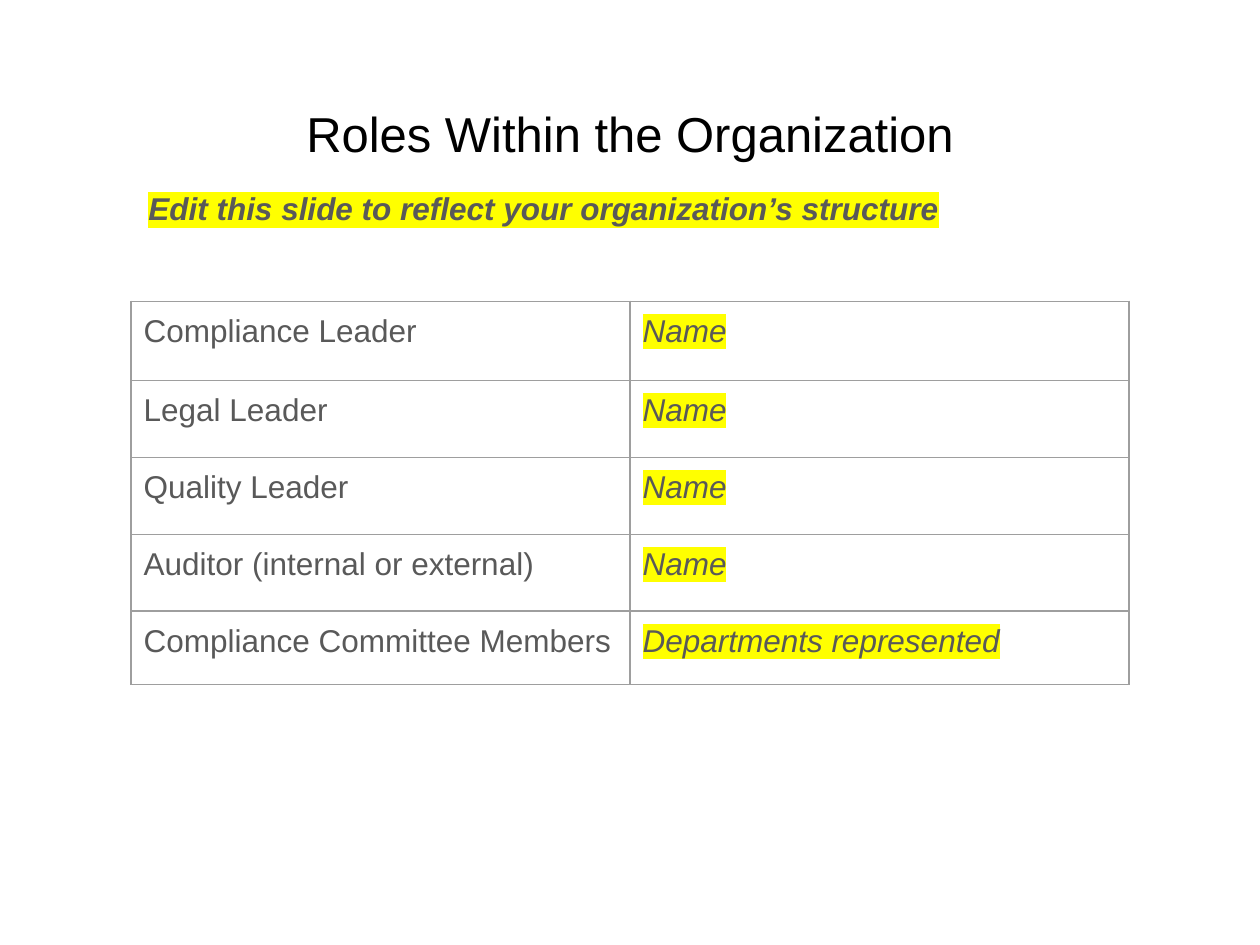
from pptx import Presentation
from pptx.dml.color import RGBColor as RGB
from pptx.enum.text import MSO_ANCHOR as Anchor, PP_ALIGN as Align
from pptx.oxml import parse_xml
from pptx.oxml.ns import nsdecls, qn
from pptx.util import Inches, Pt

# Content
TITLE = "Roles Within the Organization"
NOTE = "Edit this slide to reflect your organization’s structure"
ROLES = [
    ("Compliance Leader", "Name"),
    ("Legal Leader", "Name"),
    ("Quality Leader", "Name"),
    ("Auditor (internal or external)", "Name"),
    ("Compliance Committee Members", "Departments represented"),
]

THEME = {
    "font": "Arial", "title_size": 28, "body_size": 18,
    "title": "000000", "body": "595959", "mark": "FFFF00",
    "border": "9E9E9E", "border_pt": 0.75,
}
COL_W = 3.96
ROW_H = [0.63, 0.61, 0.61, 0.61, 0.58]


def add_run(p, text, size, color, bold=False, italic=False, mark=None):
    r = p.add_run()
    r.text = text
    f = r.font
    f.name, f.size, f.bold, f.italic = THEME["font"], Pt(size), bold, italic
    f.color.rgb = RGB.from_string(color)
    if mark:  # a highlight follows the fill
        r._r.rPr.find(qn("a:solidFill")).addnext(parse_xml(
            f'<a:highlight {nsdecls("a")}><a:srgbClr val="{mark}"/></a:highlight>'))


def add_text_box(slide, x, y, w, h, anchor):
    tf = slide.shapes.add_textbox(*map(Inches, (x, y, w, h))).text_frame
    tf.word_wrap = True
    tf.vertical_anchor = anchor
    return tf.paragraphs[0]


def style_cell(cell):
    cell.margin_left = cell.margin_right = Inches(0.1)
    cell.margin_top = cell.margin_bottom = Inches(0.1)
    tcPr = cell._tc.get_or_add_tcPr()
    for side in "LRTB":
        tcPr.append(parse_xml(
            f'<a:ln{side} {nsdecls("a")} w="{Pt(THEME["border_pt"])}"><a:solidFill>'
            f'<a:srgbClr val="{THEME["border"]}"/></a:solidFill></a:ln{side}>'))
    cell.fill.background()


def main():
    prs = Presentation()
    prs.slide_width, prs.slide_height = Inches(10), Inches(7.5)
    s = prs.slides.add_slide(prs.slide_layouts[6])

    # Title
    p = add_text_box(s, 0.5, 0.37, 9, 1.37, Anchor.MIDDLE)
    p.alignment = Align.CENTER
    add_run(p, TITLE, THEME["title_size"], THEME["title"])

    # Table of roles
    table = s.shapes.add_table(
        len(ROLES), 2, Inches(1.04), Inches(2.39),
        Inches(2 * COL_W), Inches(sum(ROW_H))).table
    table.first_row = table.horz_banding = False
    for col in table.columns:
        col.width = Inches(COL_W)
    for row, height, texts in zip(table.rows, ROW_H, ROLES):
        row.height = Inches(height)
        for c, (cell, text) in enumerate(zip(row.cells, texts)):
            style_cell(cell)
            add_run(cell.text_frame.paragraphs[0], text, THEME["body_size"],
                    THEME["body"], italic=c == 1,
                    mark=THEME["mark"] if c == 1 else None)

    # Editing note
    p = add_text_box(s, 1.08, 1.41, 8.1, 0.69, Anchor.TOP)
    p.line_spacing = 1.15
    add_run(p, NOTE, THEME["body_size"], THEME["body"],
            bold=True, italic=True, mark=THEME["mark"])

    prs.save("out.pptx")


if __name__ == "__main__":
    main()
